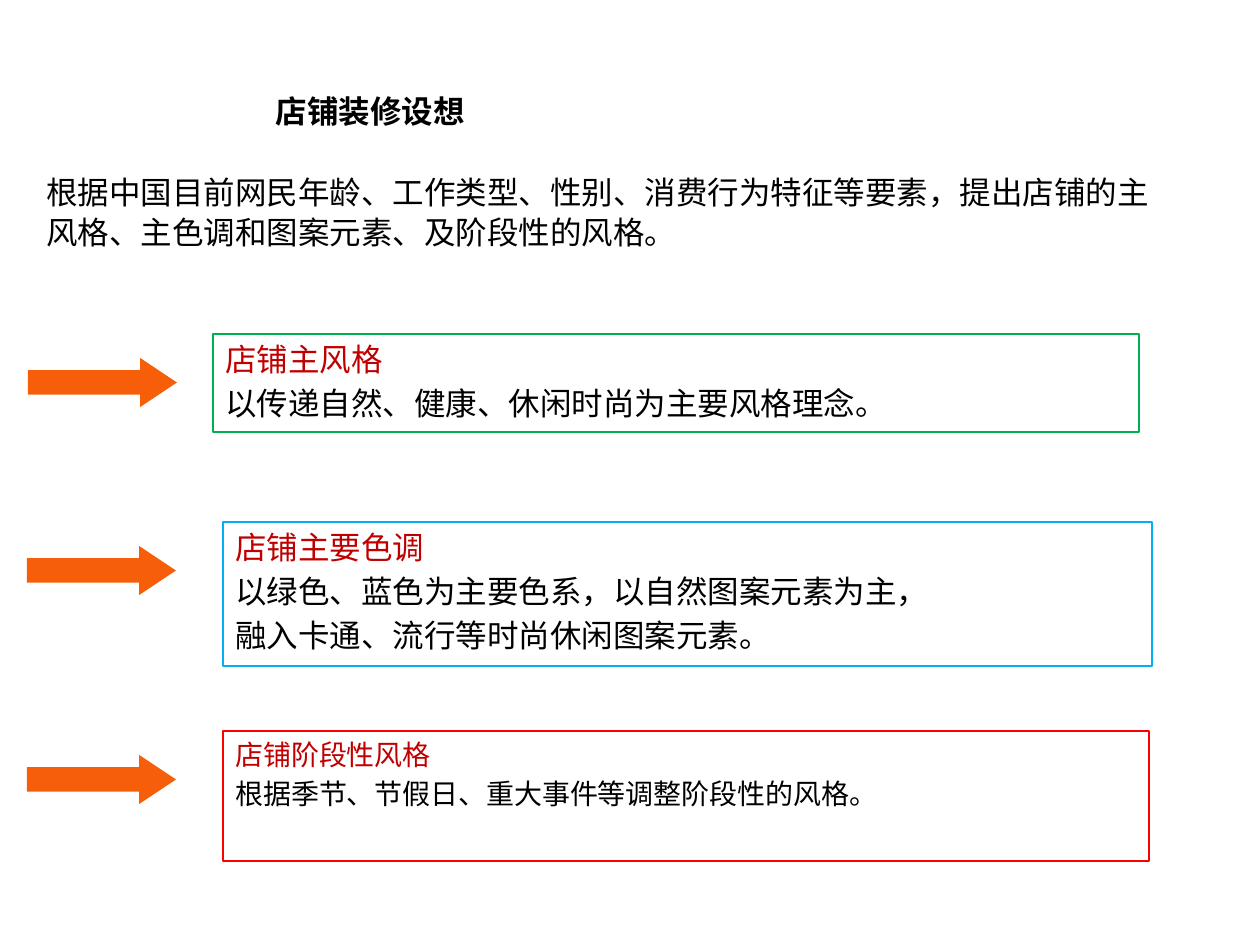
from lxml import etree
from pptx import Presentation
from pptx.dml.color import RGBColor
from pptx.enum.lang import MSO_LANGUAGE_ID
from pptx.enum.shapes import MSO_SHAPE
from pptx.enum.text import MSO_ANCHOR, PP_ALIGN
from pptx.oxml.ns import qn
from pptx.util import Pt

EMU_PER_PX = 914400 / 126
RECTANGLE = MSO_SHAPE.RECTANGLE
RIGHT_ARROW = MSO_SHAPE.RIGHT_ARROW
LEFT = PP_ALIGN.LEFT
TOP, MIDDLE = MSO_ANCHOR.TOP, MSO_ANCHOR.MIDDLE
CHINESE = MSO_LANGUAGE_ID.SIMPLIFIED_CHINESE

BLACK, DARK_RED, ORANGE = "000000", "C00000", "F75E09"
TITLE_FONT = "Noto Sans CJK SC"


def px(*lengths):
    """Turn pixel lengths into a list of EMU."""
    return [round(length * EMU_PER_PX) for length in lengths]


def write(box, lines, colors=(BLACK,), size=18, font="Arial", asian_font="Calibri",
          bold=False, anchor=TOP, line_spacing=1.0, gap=0.0):
    """Fill a box with one paragraph per line; the last colour serves the remaining lines."""
    frame = box.text_frame
    frame.word_wrap = True
    frame.vertical_anchor = anchor
    frame.text = "\n".join(lines)
    for index, para in enumerate(frame.paragraphs):
        para.alignment = LEFT
        para.line_spacing = line_spacing
        para.space_before = Pt(gap if index else 0)
        span = para.runs[0]
        span.font.size = Pt(size)
        span.font.bold = bold
        span.font.name = font
        span.font.language_id = CHINESE
        span.font.color.rgb = RGBColor.from_string(colors[min(index, len(colors) - 1)])
        latin = span.font._element.find(qn("a:latin"))
        asian = etree.Element(qn("a:ea"), typeface=asian_font)
        latin.addnext(asian)


deck = Presentation()
deck.slide_width, deck.slide_height = px(1260, 945)
page = deck.slides.add_slide(deck.slide_layouts[5])

title = page.shapes.title
title.left, title.top, title.width, title.height = px(263, 86, 736, 50)
write(title, ["店铺装修设想"], font=TITLE_FONT, asian_font=TITLE_FONT, bold=True, anchor=MIDDLE)

intro = page.shapes.add_textbox(*px(34, 165, 1142, 92))
write(intro, ["根据中国目前网民年龄、工作类型、性别、消费行为特征等要素，"
              "提出店铺的主风格、主色调和图案元素、及阶段性的风格。"], line_spacing=1.05)

# Arrow left, box left, top, width, height, outline, font, text size, lines
ideas = [
    (28, 213, 334, 926, 98, "00B050", "Arial", 18,
     ["店铺主风格", "以传递自然、健康、休闲时尚为主要风格理念。"]),
    (27, 223, 522, 929, 144, "00B0F0", "Calibri", 18,
     ["店铺主要色调", "以绿色、蓝色为主要色系，以自然图案元素为主，",
      "融入卡通、流行等时尚休闲图案元素。"]),
    (27, 223, 731, 926, 130, "FF0000", "Calibri", 16,
     ["店铺阶段性风格", "根据季节、节假日、重大事件等调整阶段性的风格。"]),
]
for arrow_left, left, top, width, height, outline, font, size, lines in ideas:
    arrow = page.shapes.add_shape(RIGHT_ARROW, *px(arrow_left, top + 24, 149, 49))
    arrow.shadow.inherit = False
    arrow.adjustments[0] = 0.5
    arrow.adjustments[1] = 0.75
    arrow.fill.solid()
    arrow.fill.fore_color.rgb = RGBColor.from_string(ORANGE)
    arrow.line.fill.background()

    box = page.shapes.add_shape(RECTANGLE, *px(left, top, width, height))
    box.shadow.inherit = False
    box.fill.background()
    box.line.color.rgb = RGBColor.from_string(outline)
    box.line.width = Pt(1.5)
    write(box, lines, colors=(DARK_RED, BLACK), size=size, font=font, gap=size * 0.2)

deck.save("out.pptx")
